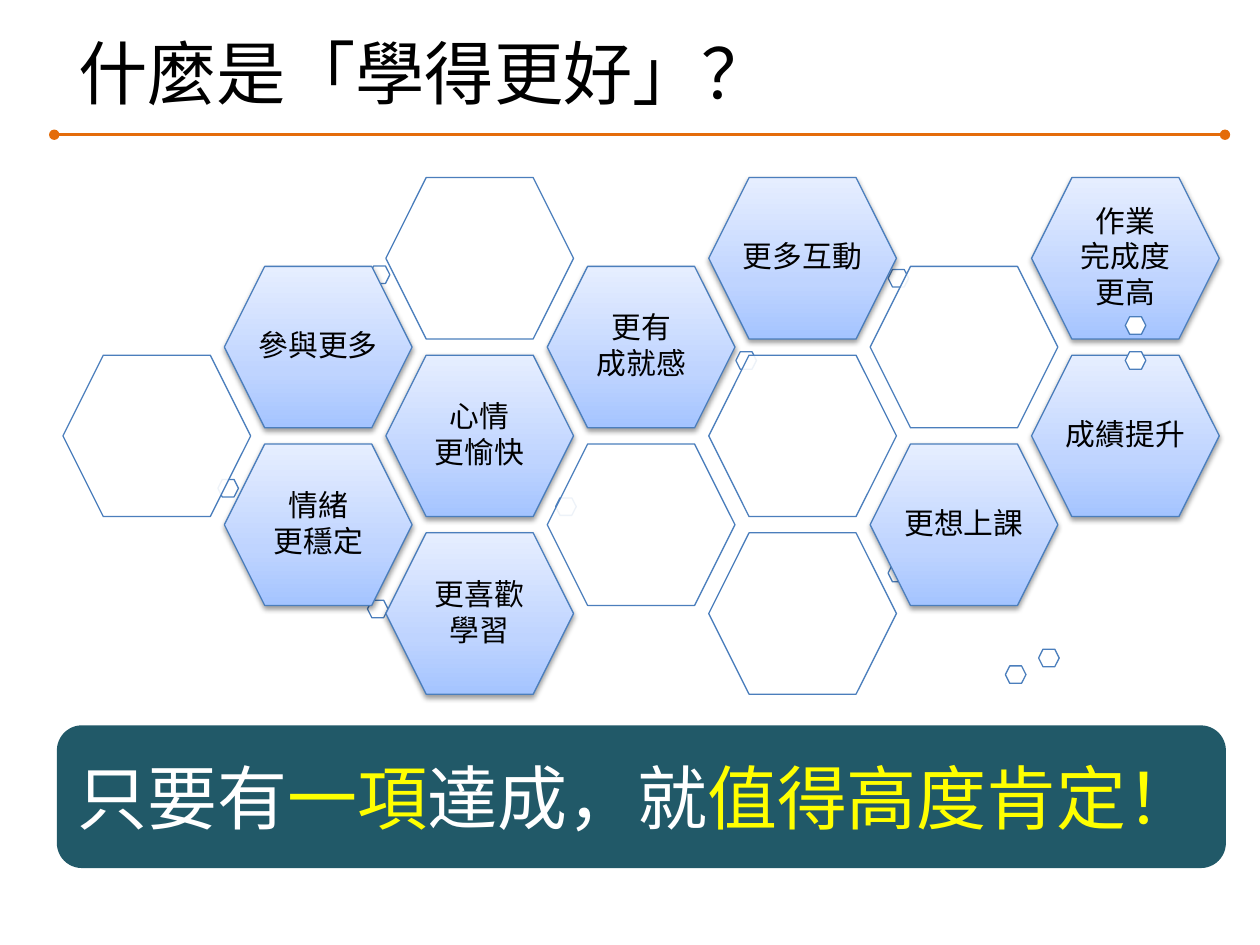
import copy

import lxml.etree
import pptx
import pptx.dml.color
import pptx.enum.shapes
import pptx.enum.text
import pptx.oxml.ns
import pptx.util

Pt = pptx.util.Pt
RGBColor = pptx.dml.color.RGBColor
PRESETS = pptx.enum.shapes.MSO_SHAPE
ALIGN = pptx.enum.text.PP_ALIGN
MIDDLE = pptx.enum.text.MSO_ANCHOR.MIDDLE

BLACK = RGBColor(0x00, 0x00, 0x00)
WHITE = RGBColor(0xFF, 0xFF, 0xFF)
YELLOW = RGBColor(0xFF, 0xFF, 0x00)
ORANGE = RGBColor(0xE4, 0x6C, 0x0A)
TEAL = RGBColor(0x21, 0x59, 0x68)
OUTLINE = RGBColor(0x4B, 0x7E, 0xBC)
GRADIENT = [
    (0, RGBColor(0xA4, 0xC4, 0xFF)),
    (0.35, RGBColor(0xBF, 0xD4, 0xFF)),
    (1, RGBColor(0xE6, 0xEE, 0xFF)),
]
CJK_FONT = "Noto Sans CJK SC"

CELL_WIDTH, CELL_HEIGHT = 107.25, 92.25
COLUMN_STEP, ROW_STEP = 92.25, 50.75
CELLS = [
    (1, 3, "情緒\n更穩定"),
    (0, 2, ""),
    (2, 2, "心情\n更愉快"),
    (3, 3, ""),
    (1, 1, "參與更多"),
    (2, 0, ""),
    (3, 1, "更有\n成就感"),
    (4, 2, ""),
    (4, 0, "更多互動"),
    (5, 1, ""),
    (5, 3, "更想上課"),
    (4, 4, ""),
    (2, 4, "更喜歡\n學習"),
    (6, 2, "成績提升"),
    (6, 0, "作業\n完成度\n更高"),
]
BACK_DOTS = [
    (88.5, 172.5), (281.5, 183), (175, 50.5), (384.5, 99.5), (471.5, 52.5),
    (471.5, 221), (174, 241.5), (557.5, 269.5), (538.5, 279),
]
FRONT_DOTS = [(607, 79.5), (607, 99.5)]


def add_child(parent, tag, **attributes):
    """Append a drawing element with the given attributes."""
    return lxml.etree.SubElement(parent, pptx.oxml.ns.qn(tag), attributes)


def write_text(frame, pieces, *, size, font=CJK_FONT, align=ALIGN.LEFT,
               spacing=None, after=None, margins=None):
    """Write coloured pieces of text, starting a paragraph at each newline."""
    frame.word_wrap = True
    frame.auto_size = pptx.enum.text.MSO_AUTO_SIZE.NONE
    frame.vertical_anchor = MIDDLE
    if margins:
        frame.margin_left = frame.margin_right = Pt(margins[0])
        frame.margin_top = frame.margin_bottom = Pt(margins[1])
    paragraph = frame.paragraphs[0]
    for text, color in pieces:
        for index, line in enumerate(text.split("\n")):
            if index:
                paragraph = frame.add_paragraph()
            paragraph.alignment = align
            paragraph.line_spacing = spacing
            paragraph.space_after = after
            run = paragraph.add_run()
            run.text = line
            run.font.size = Pt(size)
            run.font.name = font
            run.font.color.rgb = color
            add_child(run.font._element, "a:ea", typeface=CJK_FONT)


def style_shape(shape, fill, line, line_width):
    """Give a shape a solid fill and an outline without a shadow."""
    shape.shadow.inherit = False
    shape.fill.solid()
    shape.fill.fore_color.rgb = fill
    shape.line.color.rgb = line
    shape.line.width = Pt(line_width)


def add_heading(slide, left, top, width, height):
    """Place the title and the rule with round ends below it."""
    title = slide.shapes.title
    title.left, title.top = Pt(left + 6.5), Pt(top)
    title.width, title.height = Pt(width - 10), Pt(height - 10)
    write_text(title.text_frame, [("什麼是「學得更好」？", BLACK)], size=39.6)
    rule = slide.shapes.add_connector(
        pptx.enum.shapes.MSO_CONNECTOR.STRAIGHT,
        Pt(left), Pt(top + height), Pt(left + width), Pt(top + height))
    rule.line.color.rgb = ORANGE
    rule.line.width = Pt(1.5)
    line = rule.line._get_or_add_ln()
    add_child(line, "a:headEnd", type="oval")
    add_child(line, "a:tailEnd", type="oval")
    add_child(rule._element.spPr, "a:effectLst")


def add_hexagon(slide, left, top, width, height):
    """Place a white hexagon with a thin outline."""
    hexagon = slide.shapes.add_shape(
        PRESETS.HEXAGON, Pt(left), Pt(top), Pt(width), Pt(height))
    style_shape(hexagon, WHITE, OUTLINE, 0.75)
    return hexagon


def add_empty_cell(slide, left, top):
    """Place a slightly transparent cell of the honeycomb."""
    cell = add_hexagon(slide, left, top, CELL_WIDTH, CELL_HEIGHT)
    color = cell._element.spPr.find(".//" + pptx.oxml.ns.qn("a:srgbClr"))
    add_child(color, "a:alpha", val="90000")


def add_benefit_cell(slide, left, top, benefit):
    """Place a shaded cell of the honeycomb that names a benefit."""
    inset, middle = CELL_HEIGHT / 4, CELL_HEIGHT / 2
    corners = [(inset, 0), (CELL_WIDTH - inset, 0), (CELL_WIDTH, middle),
               (CELL_WIDTH - inset, CELL_HEIGHT), (inset, CELL_HEIGHT)]
    builder = slide.shapes.build_freeform(Pt(left), Pt(top + middle))
    builder.add_line_segments([(Pt(left + x), Pt(top + y)) for x, y in corners])
    cell = builder.convert_to_shape()
    style_shape(cell, WHITE, OUTLINE, 0.75)
    cell.fill.gradient()
    cell.fill.gradient_angle = 90
    properties = cell._element.spPr
    stops = properties.find(".//" + pptx.oxml.ns.qn("a:gsLst"))
    stops.insert(1, copy.deepcopy(stops[0]))
    for stop, (position, color) in zip(cell.fill.gradient_stops, GRADIENT):
        stop.position = position
        stop.color.rgb = color
    effects = properties.find(pptx.oxml.ns.qn("a:effectLst"))
    shadow = add_child(effects, "a:outerShdw", blurRad=str(Pt(3.1)),
                       dist=str(Pt(1.6)), dir="5400000", rotWithShape="0")
    add_child(add_child(shadow, "a:srgbClr", val=str(BLACK)), "a:alpha", val="38000")
    write_text(cell.text_frame, [(benefit, BLACK)], size=17, font="Calibri",
               align=ALIGN.CENTER, spacing=0.9, after=Pt(2), margins=(16, 15))


def add_dots(slide, left, top, offsets):
    """Place small hexagons at offsets from a corner."""
    for x, y in offsets:
        add_hexagon(slide, left + x, top + y, 11.75, 10)


def add_honeycomb(slide, left, top):
    """Place the cells on staggered columns with small hexagons around them."""
    add_dots(slide, left, top, BACK_DOTS)
    for column, half_row, benefit in CELLS:
        x, y = left + column * COLUMN_STEP, top + half_row * ROW_STEP
        if benefit:
            add_benefit_cell(slide, x, y, benefit)
        else:
            add_empty_cell(slide, x, y)
    add_dots(slide, left, top, FRONT_DOTS)


def add_conclusion(slide, left, top, width, height):
    """Place the banner with the closing message."""
    banner = slide.shapes.add_shape(
        PRESETS.ROUNDED_RECTANGLE, Pt(left), Pt(top), Pt(width), Pt(height))
    style_shape(banner, TEAL, TEAL, 2)
    message = [("只要有", WHITE), ("一項", YELLOW), ("達成，就", WHITE),
               ("值得高度肯定！", YELLOW)]
    write_text(banner.text_frame, message, size=40)


def main():
    """Build the slide and save it."""
    presentation = pptx.Presentation()
    presentation.slide_width, presentation.slide_height = Pt(720), Pt(540)
    slide = presentation.slides.add_slide(presentation.slide_layouts[5])
    add_heading(slide, 31, 15, 669, 62)
    add_honeycomb(slide, 36, 101.5)
    add_conclusion(slide, 33.5, 415.5, 666, 79.5)
    presentation.save("out.pptx")


if __name__ == "__main__":
    main()
